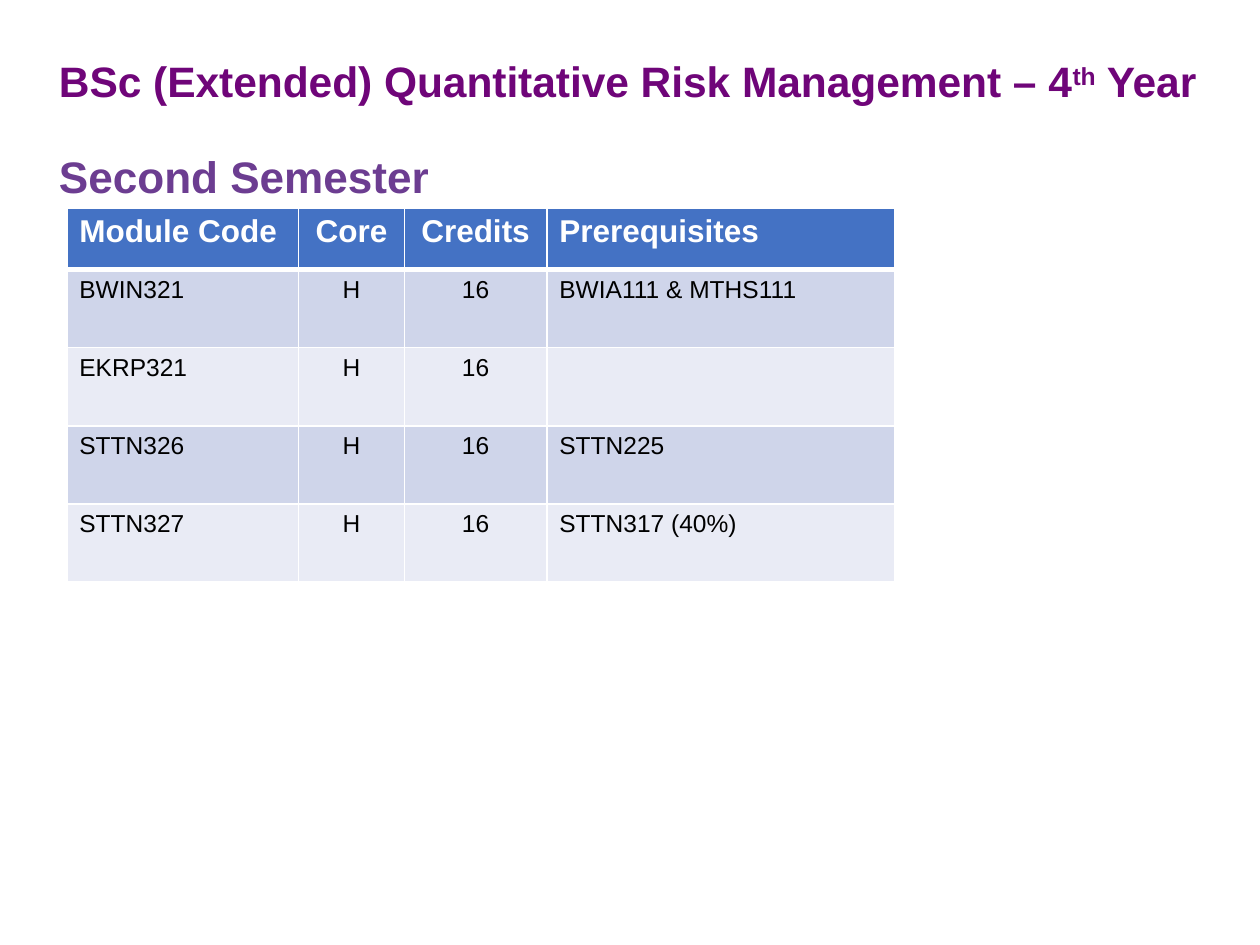
from typing import NamedTuple

from lxml import etree
from pptx import Presentation
from pptx.dml.color import RGBColor
from pptx.enum.text import PP_ALIGN
from pptx.oxml.ns import qn
from pptx.util import Inches, Pt

LEFT, CENTER = PP_ALIGN.LEFT, PP_ALIGN.CENTER
FONT = "Arial"
COLORS = {
    "title": "6F0579",
    "semester": "6C3D91",
    "header": "4472C4",
    "band_dark": "CFD5EA",
    "band_light": "E9EBF5",
    "white": "FFFFFF",
    "black": "000000",
}


class Column(NamedTuple):
    heading: str
    width: float
    align: PP_ALIGN


class Module(NamedTuple):
    code: str
    core: str
    credits: str
    prerequisites: str


class CellStyle(NamedTuple):
    fill: str
    color: str
    size: float
    bold: bool
    bottom_border: float


COLUMNS = [
    Column("Module Code", 1.84, LEFT),
    Column("Core", 0.84, CENTER),
    Column("Credits", 1.13, CENTER),
    Column("Prerequisites", 2.76, LEFT),
]
MODULES = [
    Module("BWIN321", "H", "16", "BWIA111 & MTHS111"),
    Module("EKRP321", "H", "16", ""),
    Module("STTN326", "H", "16", "STTN225"),
    Module("STTN327", "H", "16", "STTN317 (40%)"),
]
HEADER_STYLE = CellStyle("header", "white", 18, True, 3)
BAND_STYLES = [
    CellStyle("band_dark", "black", 14, False, 1),
    CellStyle("band_light", "black", 14, False, 1),
]
HEADER_HEIGHT, MODULE_HEIGHT = 0.49, 0.62


def format_font(font, size: float, color: str, bold: bool) -> None:
    font.name = FONT
    font.size = Pt(size)
    font.bold = bold
    font.color.rgb = RGBColor.from_string(COLORS[color])


def add_border(cell, side: str, width: float) -> None:
    line = etree.SubElement(cell._tc.get_or_add_tcPr(), qn(f"a:{side}"), w=str(Pt(width)))
    fill = etree.SubElement(line, qn("a:solidFill"))
    etree.SubElement(fill, qn("a:srgbClr"), val=COLORS["white"])


def fill_cell(cell, text: str, align: PP_ALIGN, style: CellStyle, top_border: float) -> None:
    # Borders come before the fill in the cell properties
    for side, width in (("lnL", 1), ("lnR", 1), ("lnT", top_border), ("lnB", style.bottom_border)):
        add_border(cell, side, width)
    cell.fill.solid()
    cell.fill.fore_color.rgb = RGBColor.from_string(COLORS[style.fill])
    paragraph = cell.text_frame.paragraphs[0]
    paragraph.text = text
    paragraph.alignment = align
    format_font(paragraph.font, style.size, style.color, style.bold)
    for run in paragraph.runs:
        format_font(run.font, style.size, style.color, style.bold)


def add_heading(slide) -> None:
    heading = slide.shapes.add_textbox(Inches(0.37), Inches(0.39), Inches(9.4), Inches(1.2))
    frame = heading.text_frame
    frame.word_wrap = True
    programme = frame.paragraphs[0]
    programme.text = "BSc (Extended) Quantitative Risk Management – 4"
    ordinal = programme.add_run()
    ordinal.text = "th"
    programme.add_run().text = " Year"
    for run in programme.runs:
        format_font(run.font, 24.3, "title", True)
    ordinal._r.get_or_add_rPr().set("baseline", "30000")

    semester = frame.add_paragraph()
    semester.text = "Second Semester"
    semester.space_before = Pt(24.8)
    format_font(semester.runs[0].font, 25.2, "semester", True)


def add_module_table(slide) -> None:
    width = sum(column.width for column in COLUMNS)
    height = HEADER_HEIGHT + MODULE_HEIGHT * len(MODULES)
    table = slide.shapes.add_table(
        len(MODULES) + 1, len(COLUMNS), Inches(0.53), Inches(1.65), Inches(width), Inches(height)
    ).table
    for index, column in enumerate(COLUMNS):
        table.columns[index].width = Inches(column.width)

    rows = [[column.heading for column in COLUMNS], *MODULES]
    top_border = 1
    for r, texts in enumerate(rows):
        style = BAND_STYLES[(r - 1) % 2] if r else HEADER_STYLE
        table.rows[r].height = Inches(MODULE_HEIGHT if r else HEADER_HEIGHT)
        for c, (text, column) in enumerate(zip(texts, COLUMNS)):
            fill_cell(table.cell(r, c), text, column.align, style, top_border)
        top_border = style.bottom_border


def main() -> None:
    presentation = Presentation()
    presentation.slide_width, presentation.slide_height = Inches(10), Inches(7.5)
    slide = presentation.slides.add_slide(presentation.slide_layouts[6])
    add_heading(slide)
    add_module_table(slide)
    presentation.save("out.pptx")


if __name__ == "__main__":
    main()
